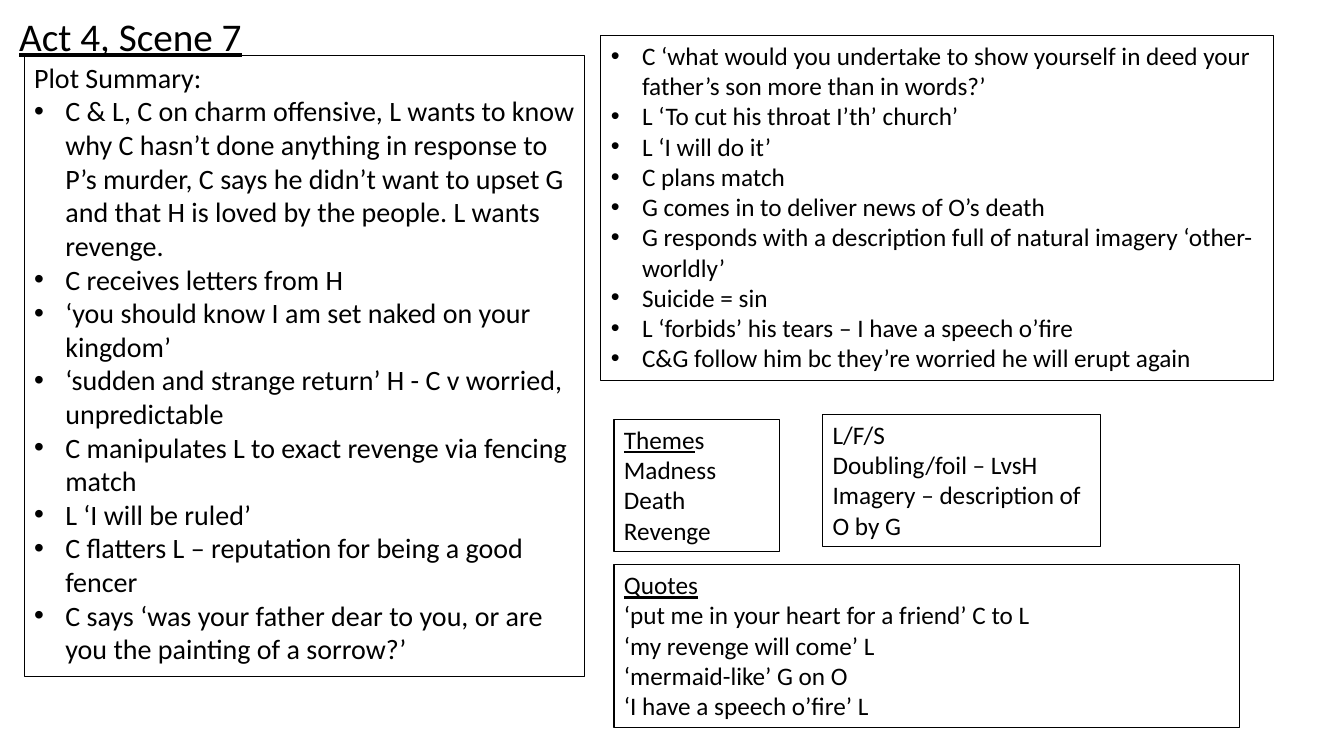
from lxml import etree
from pptx import Presentation
from pptx import util as u
from pptx.dml.color import RGBColor
from pptx.enum import text
from pptx.oxml.ns import qn

PX = u.Inches(1) // 100
BLACK = "000000"
INDENT = 31

PLOT = [
    "C & L, C on charm offensive, L wants to know why C hasn’t done anything in response to P’s murder, "
    "C says he didn’t want to upset G and that H is loved by the people. L wants revenge.",
    "C receives letters from H",
    "‘you should know I am set naked on your kingdom’",
    "‘sudden and strange return’ H - C v worried, unpredictable",
    "C manipulates L to exact revenge via fencing match",
    "L ‘I will be ruled’",
    "C flatters L – reputation for being a good fencer",
    "C says ‘was your father dear to you, or are you the painting of a sorrow?’",
]
PLOT_CONTINUED = [
    "C ‘what would you undertake to show yourself in deed your father’s son more than in words?’",
    "L ‘To cut his throat I’th’ church’",
    "L ‘I will do it’",
    "C plans match",
    "G comes in to deliver news of O’s death",
    "G responds with a description full of natural imagery ‘other-worldly’",
    "Suicide = sin",
    "L ‘forbids’ his tears – I have a speech o’fire",
    "C&G follow him bc they’re worried he will erupt again",
]
THEMES = ["Madness", "Death", "Revenge"]
TECHNIQUES = ["L/F/S", "Doubling/foil – LvsH", "Imagery – description of O by G"]
QUOTES = [
    "‘put me in your heart for a friend’ C to L",
    "‘my revenge will come’ L",
    "‘mermaid-like’ G on O",
    "‘I have a speech o’fire’ L",
]


def px(n):
    return u.Emu(n * PX)


def color(value):
    return RGBColor.from_string(value)


def add_text(p, content, size=18, underline=False):
    r = p.add_run()
    r.text = content
    r.font.name = "Calibri"
    r.font.size = u.Pt(size)
    r.font.color.rgb = color(BLACK)
    r.font.underline = underline


def add_bullet(p):
    pPr = p._p.get_or_add_pPr()
    pPr.set("marL", str(px(INDENT)))
    pPr.set("indent", str(-px(INDENT)))
    etree.SubElement(pPr, qn("a:buFont")).set("typeface", "Arial")
    etree.SubElement(pPr, qn("a:buChar")).set("char", "•")


def place_title(s, box, content):
    sp = s.shapes.title
    sp.left, sp.top, sp.width, sp.height = map(px, box)
    tf = sp.text_frame
    tf.word_wrap = False
    tf.auto_size = text.MSO_AUTO_SIZE.SHAPE_TO_FIT_TEXT
    tf.vertical_anchor = text.MSO_ANCHOR.TOP
    p = tf.paragraphs[0]
    p.alignment = text.PP_ALIGN.LEFT
    add_text(p, content, size=28, underline=True)


def add_notes_box(s, box, lines, heading=(), size=18, bullets=False):
    sp = s.shapes.add_textbox(*map(px, box))
    sp.line.color.rgb = color(BLACK)
    sp.line.width = u.Pt(0.75)
    tf = sp.text_frame
    tf.word_wrap = True
    tf.auto_size = text.MSO_AUTO_SIZE.SHAPE_TO_FIT_TEXT
    p = tf.paragraphs[0]
    for content, underline in heading:
        add_text(p, content, size=size, underline=underline)
    for i, line in enumerate(lines):
        if i or heading:
            p = tf.add_paragraph()
        if bullets:
            add_bullet(p)
        add_text(p, line, size=size)


def build_scene_slide(prs):
    s = prs.slides.add_slide(prs.slide_layouts.get_by_name("Title Only"))
    place_title(s, (9, 7, 244, 57), "Act 4, Scene 7")
    add_notes_box(s, (24, 55, 556, 616), PLOT, [("Plot Summary:", False)], size=20, bullets=True)
    add_notes_box(s, (596, 35, 667, 343), PLOT_CONTINUED, bullets=True)
    add_notes_box(s, (609, 416, 164, 131), THEMES, [("Theme", True), ("s", False)])
    add_notes_box(s, (816, 411, 276, 131), TECHNIQUES)
    add_notes_box(s, (609, 560, 620, 162), QUOTES, [("Quotes", True)])


def main():
    prs = Presentation()
    prs.slide_width, prs.slide_height = px(1333), px(750)
    build_scene_slide(prs)
    prs.save("out.pptx")


if __name__ == "__main__":
    main()
